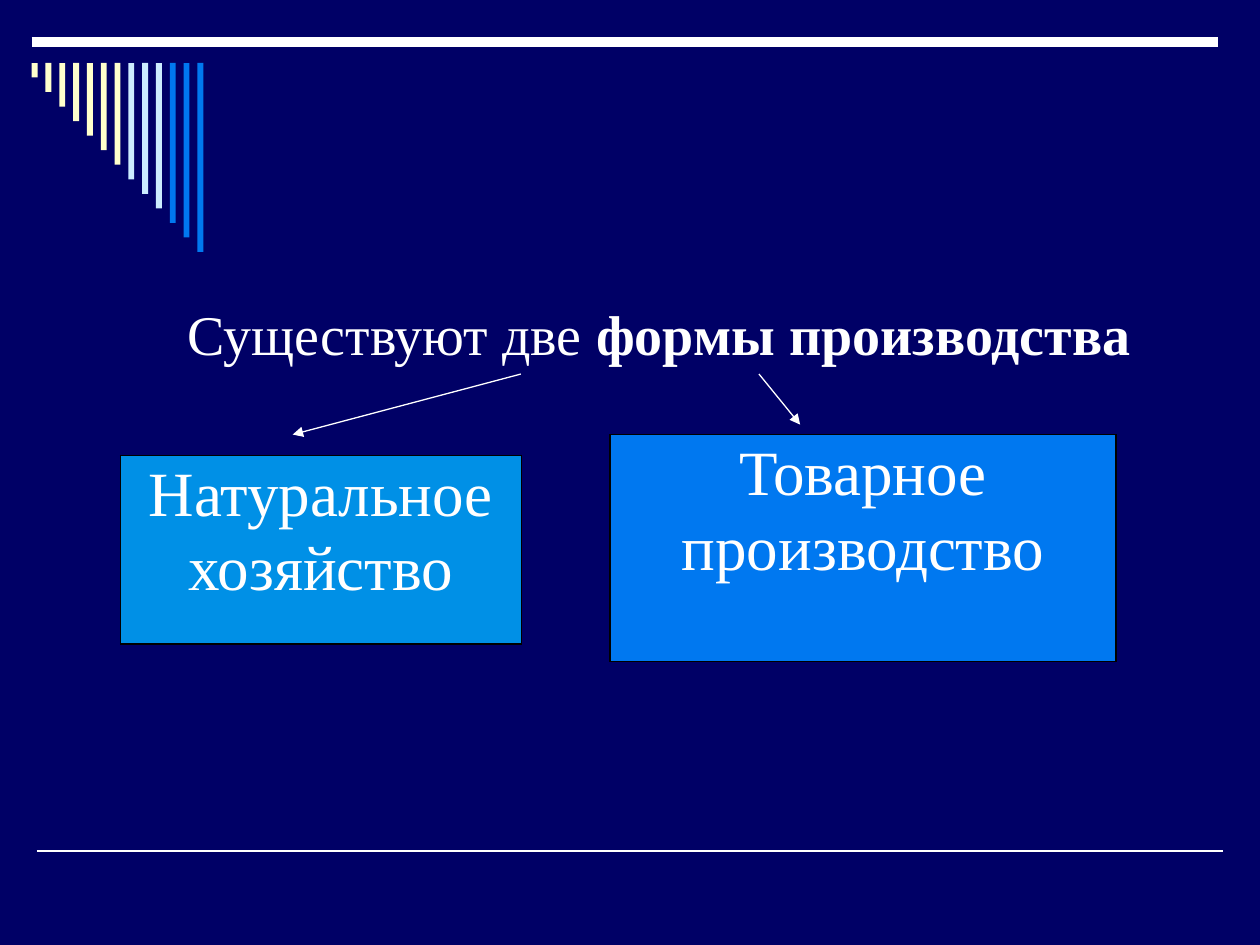
from lxml import etree
from pptx import Presentation
from pptx.dml.color import RGBColor
from pptx.enum import shapes, text
from pptx.oxml import ns
from pptx.util import Cm, Pt

NAVY = RGBColor(0x00, 0x00, 0x66)
WHITE = RGBColor(0xFF, 0xFF, 0xFF)
BLACK = RGBColor(0x00, 0x00, 0x00)
CREAM = RGBColor(0xFF, 0xFF, 0xCC)
PALE = RGBColor(0xCC, 0xEC, 0xFF)
BLUE = RGBColor(0x00, 0x78, 0xF0)
AZURE = RGBColor(0x00, 0x90, 0xE6)
FONT = "Times New Roman"


def set_font(p, size):
    """Give a centred paragraph the slide's font in white."""
    p.alignment = text.PP_ALIGN.CENTER
    p.font.name, p.font.size = FONT, Pt(size)
    p.font.color.rgb = WHITE


def add_line(s, x1, y1, x2, y2, width, arrow=False):
    """Draw a white straight line, with an arrowhead at its end if asked."""
    c = s.shapes.add_connector(shapes.MSO_CONNECTOR.STRAIGHT,
                               Cm(x1), Cm(y1), Cm(x2), Cm(y2))
    c.line.color.rgb, c.line.width = WHITE, Pt(width)
    etree.SubElement(c._element.spPr, ns.qn("a:effectLst"))
    if arrow:
        etree.SubElement(c.line._get_or_add_ln(), ns.qn("a:tailEnd"), type="triangle")


def add_bars(s, x, y, w, h):
    """Draw a group of evenly spaced bars growing to the right."""
    colors = [CREAM] * 7 + [PALE] * 3 + [BLUE] * 3
    bar_w = 0.12
    step = (w - bar_w) / (len(colors) - 1)
    grp = s.shapes.add_group_shape()
    for i, color in enumerate(colors):
        sp = grp.shapes.add_shape(shapes.MSO_SHAPE.RECTANGLE, Cm(x + i * step), Cm(y),
                                  Cm(bar_w), Cm(h * (i + 1) / len(colors)))
        sp.shadow.inherit = False
        sp.fill.solid()
        sp.fill.fore_color.rgb = color
        sp.line.fill.background()


def add_title(s, x, y, w, h):
    """Place the title with its key words in bold."""
    sp = s.shapes.title
    sp.left, sp.top, sp.width, sp.height = Cm(x), Cm(y), Cm(w), Cm(h)
    tf = sp.text_frame
    tf.auto_size = text.MSO_AUTO_SIZE.NONE
    tf.vertical_anchor = text.MSO_ANCHOR.TOP
    p = tf.paragraphs[0]
    set_font(p, 32)
    p.add_run().text = "Существуют две"
    r = p.add_run()
    r.text = " формы производства"
    r.font.bold = True


def set_borders(cell, color, width):
    """Outline all four sides of a cell."""
    tc_pr = cell._tc.get_or_add_tcPr()
    for i, side in enumerate(("lnL", "lnR", "lnT", "lnB")):
        ln = etree.Element(ns.qn(f"a:{side}"), w=str(Pt(width)))
        fill = etree.SubElement(ln, ns.qn("a:solidFill"))
        etree.SubElement(fill, ns.qn("a:srgbClr"), val=str(color))
        tc_pr.insert(i, ln)


def add_form(s, x, y, w, h, label, color):
    """Place a one-cell table naming a form of production."""
    tbl = s.shapes.add_table(1, 1, Cm(x), Cm(y), Cm(w), Cm(h)).table
    tbl.first_row = tbl.horz_banding = False
    cell = tbl.cell(0, 0)
    cell.fill.solid()
    cell.fill.fore_color.rgb = color
    set_borders(cell, BLACK, 1)
    cell.margin_left = cell.margin_right = Cm(0.19)
    cell.margin_top = cell.margin_bottom = 0
    p = cell.text_frame.paragraphs[0]
    p.text = label
    p.line_spacing = 1.07
    set_font(p, 36)


def main():
    """Build and save the slide."""
    prs = Presentation()
    prs.slide_width, prs.slide_height = Cm(25.4), Cm(19.05)
    s = prs.slides.add_slide(prs.slide_layouts[5])
    s.background.fill.solid()
    s.background.fill.fore_color.rgb = NAVY
    add_line(s, 0.74, 17.15, 24.66, 17.15, 1)
    add_line(s, 0.64, 0.85, 24.56, 0.85, 6)
    add_bars(s, 0.64, 1.27, 3.46, 3.81)
    add_title(s, 2.5, 5.92, 21.58, 1.62)
    add_line(s, 10.5, 7.54, 5.9, 8.76, 0.75, arrow=True)
    add_form(s, 2.43, 9.18, 8.08, 3.8, "Натуральное хозяйство", AZURE)
    add_line(s, 15.3, 7.54, 16.13, 8.56, 0.75, arrow=True)
    add_form(s, 12.3, 8.76, 10.2, 4.57, "Товарное производство", BLUE)
    prs.save("out.pptx")


if __name__ == "__main__":
    main()
